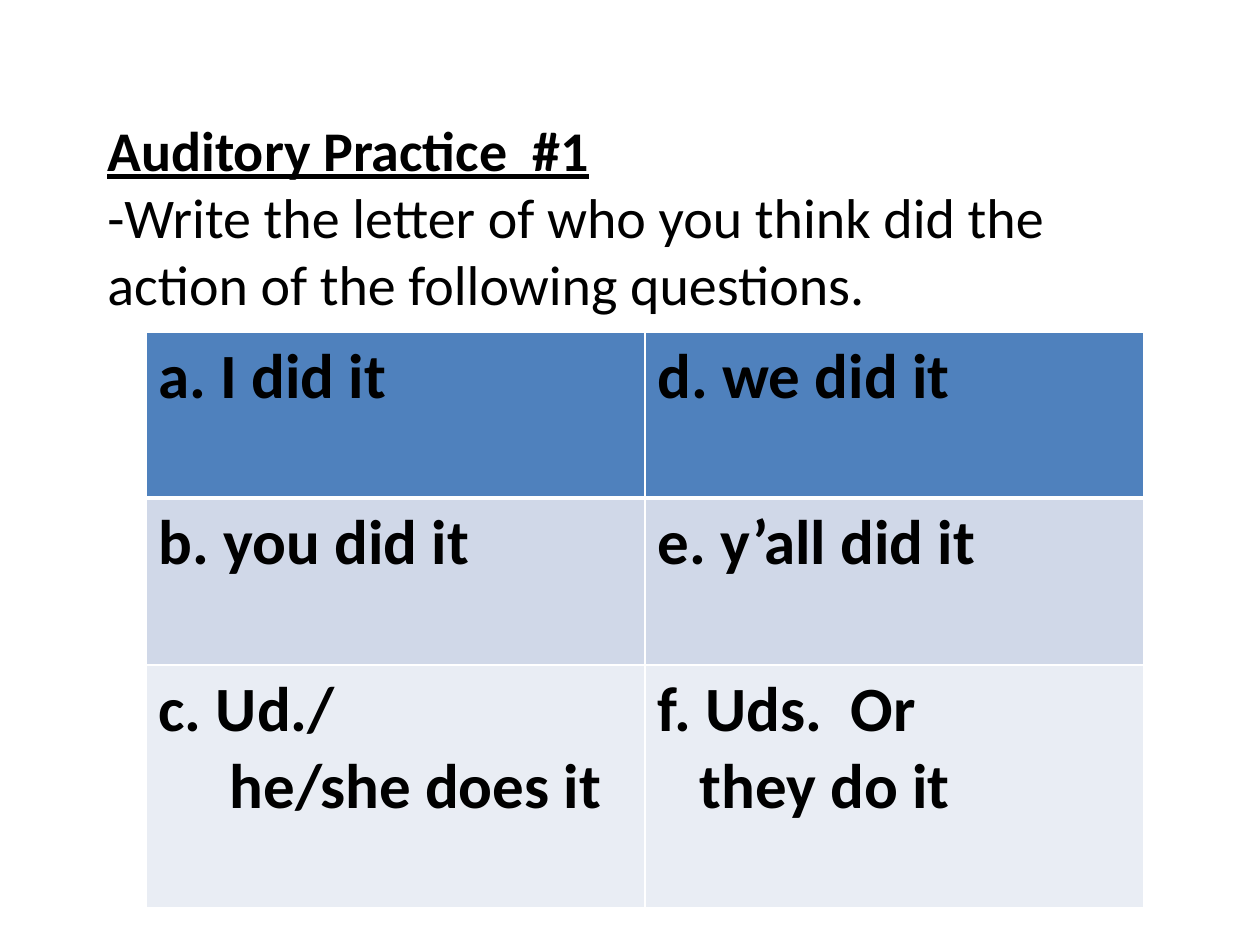
from lxml import etree
from pptx import Presentation
from pptx.dml.color import RGBColor
from pptx.enum.text import MSO_ANCHOR
from pptx.oxml.ns import qn
from pptx.util import Pt

EMU_PER_PX = 914400 / 126
BLANK_LAYOUT = 6
MIDDLE = MSO_ANCHOR.MIDDLE
FONT = "Calibri"
COLORS = {
    "text": "000000",
    "border": "FFFFFF",
    "header": "4F81BD",
    "band_dark": "D0D8E8",
    "band_light": "E9EDF4",
}
ROW_FILLS = ["header", "band_dark", "band_light"]
ROW_HEIGHTS = [166, 167, 243]

# Each cell is a list of (line, left indent in px).
ANSWERS = [
    [[("a. I did it", 0)], [("d. we did it", 0)]],
    [[("b. you did it", 0)], [("e. y’all did it", 0)]],
    [
        [("c. Ud./", 0), ("he/she does it", 71)],
        [("f. Uds.  Or", 0), ("they do it", 42)],
    ],
]


def px(length):
    return round(length * EMU_PER_PX)


def add_text(paragraph, text, size, bold=False, underline=False, color="text"):
    run = paragraph.add_run()
    run.text = text
    font = run.font
    font.name = FONT
    font.size = Pt(size)
    font.bold = bold
    font.underline = underline
    font.color.rgb = RGBColor.from_string(COLORS[color])


def set_border(cell, side, width):
    """Draw one cell side; side is L, R, T or B and width is in points."""
    line = etree.Element(qn(f"a:ln{side}"), w=str(Pt(width)))
    fill = etree.SubElement(line, qn("a:solidFill"))
    etree.SubElement(fill, qn("a:srgbClr"), val=COLORS["border"])
    cell._tc.get_or_add_tcPr().append(line)


def add_instructions(slide, left, top, width, height):
    box = slide.shapes.add_textbox(px(left), px(top), px(width), px(height))
    frame = box.text_frame
    frame.word_wrap = True
    frame.vertical_anchor = MIDDLE
    paragraph = frame.paragraphs[0]
    add_text(paragraph, "Auditory Practice  #1", size=32, bold=True, underline=True)
    paragraph.add_line_break()
    add_text(
        paragraph,
        "-Write the letter of who you think did the action of the following questions.",
        size=32,
    )


def fill_cell(cell, lines, fill, bottom_border):
    # Borders come before the fill in the cell properties.
    for side in "LRT":
        set_border(cell, side, 1)
    set_border(cell, "B", bottom_border)
    cell.fill.solid()
    cell.fill.fore_color.rgb = RGBColor.from_string(COLORS[fill])
    frame = cell.text_frame
    for index, (text, indent) in enumerate(lines):
        paragraph = frame.add_paragraph() if index else frame.paragraphs[0]
        if indent:
            paragraph._p.get_or_add_pPr().set("marL", str(px(indent)))
        add_text(paragraph, text, size=36, bold=True)


def add_answer_table(slide, left, top, width):
    rows, columns = len(ANSWERS), len(ANSWERS[0])
    table = slide.shapes.add_table(
        rows, columns, px(left), px(top), px(width), px(sum(ROW_HEIGHTS))
    ).table
    for column in table.columns:
        column.width = px(width / columns)
    for row_index, answers in enumerate(ANSWERS):
        table.rows[row_index].height = px(ROW_HEIGHTS[row_index])
        for column_index, lines in enumerate(answers):
            fill_cell(
                table.cell(row_index, column_index),
                lines,
                fill=ROW_FILLS[row_index],
                bottom_border=1 if row_index else 3,
            )
            if row_index == 1:
                # The heavy rule below the header is shared with this row.
                top_line = table.cell(1, column_index)._tc.tcPr.find(qn("a:lnT"))
                top_line.set("w", str(Pt(3)))


def main():
    presentation = Presentation()
    presentation.slide_width = px(1260)
    presentation.slide_height = px(945)
    slide = presentation.slides.add_slide(presentation.slide_layouts[BLANK_LAYOUT])
    add_instructions(slide, left=95, top=58, width=1096, height=316)
    add_answer_table(slide, left=146, top=332, width=998)
    presentation.save("out.pptx")


if __name__ == "__main__":
    main()
